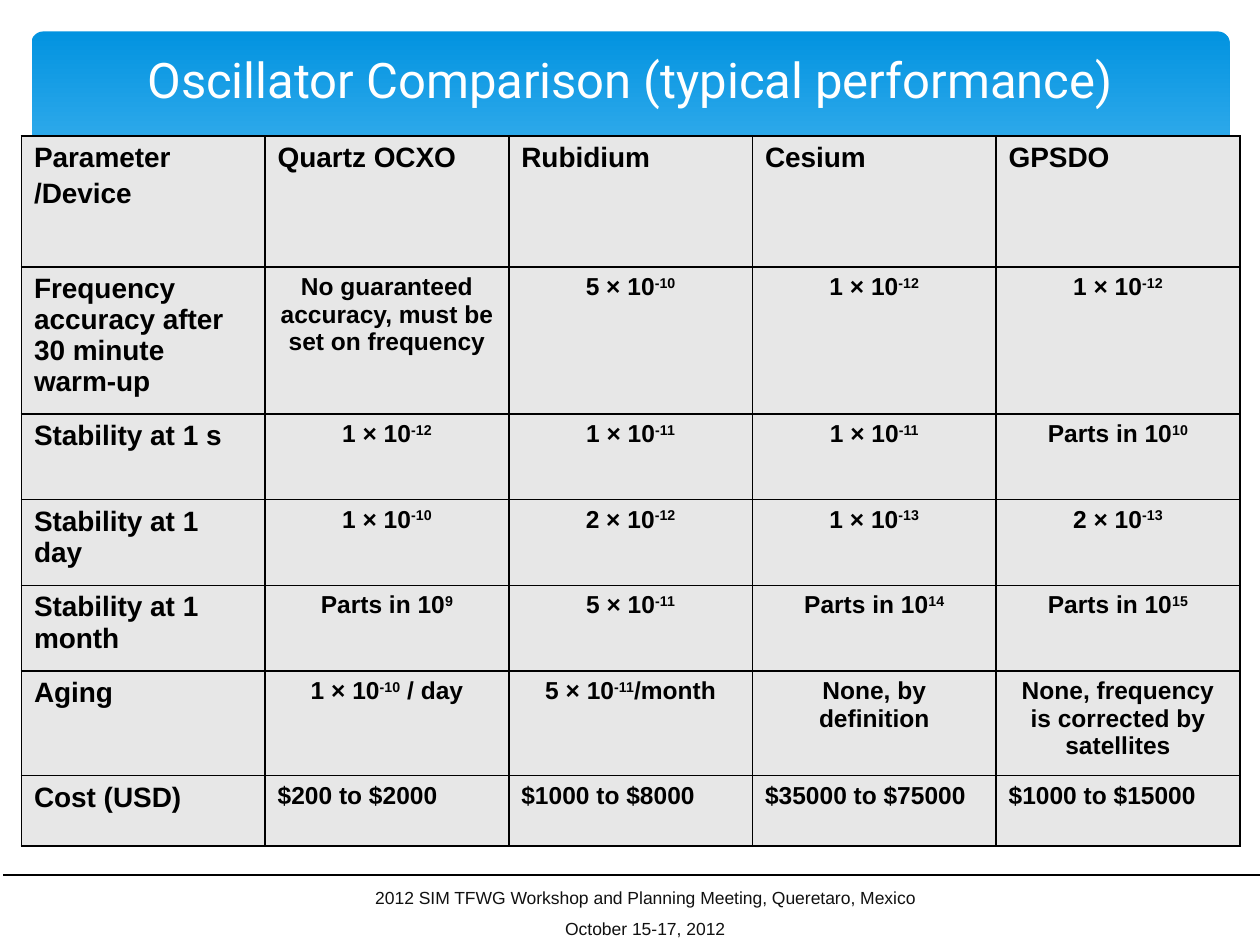
import dataclasses

import pptx
import pptx.dml.color
import pptx.enum.shapes
import pptx.enum.text
import pptx.oxml
import pptx.oxml.ns
import pptx.util

Inches = pptx.util.Inches
Pt = pptx.util.Pt
ALIGN = pptx.enum.text.PP_ALIGN
ANCHOR = pptx.enum.text.MSO_ANCHOR


@dataclasses.dataclass(frozen=True)
class Theme:
    banner_top: str = "0293E0"
    banner_bottom: str = "83D3FE"
    white: str = "FFFFFF"
    black: str = "000000"
    footer_text: str = "111111"
    cell_fill: str = "E7E7E7"
    title_font: str = "Roboto"
    body_font: str = "Arial"
    title_size: int = 28
    label_size: int = 16
    value_size: int = 14
    footer_size: int = 10


THEME = Theme()

# Text between carets is superscript; a line break starts a new paragraph.
ROWS = [
    ["Parameter\n/Device", "Quartz OCXO", "Rubidium", "Cesium", "GPSDO"],
    ["Frequency accuracy after 30 minute warm-up",
     "No guaranteed accuracy, must be set on frequency",
     "5 × 10^-10^", "1 × 10^-12^", "1 × 10^-12^"],
    ["Stability at 1 s", "1 × 10^-12^", "1 × 10^-11^", "1 × 10^-11^", "Parts in 10^10^"],
    ["Stability at 1 day", "1 × 10^-10^", "2 × 10^-12^", "1 × 10^-13^", "2 × 10^-13^"],
    ["Stability at 1 month", "Parts in 10^9^", "5 × 10^-11^", "Parts in 10^14^",
     "Parts in 10^15^"],
    ["Aging", "1 × 10^-10^ / day", "5 × 10^-11^/month", "None, by definition",
     "None, frequency is corrected by satellites"],
    ["Cost (USD)", "$200 to $2000", "$1000 to $8000", "$35000 to $75000",
     "$1000 to $15000"],
]
ROW_HEIGHTS = [1.04, 0.94, 0.68, 0.68, 0.68, 0.83, 0.56]
COLUMN_WIDTH = 1.934


def rgb(color):
    return pptx.dml.color.RGBColor.from_string(color)


def write_text(frame, text, *, size, font, color, bold=False, align=ALIGN.LEFT, gap=0):
    """Fill a text frame, with gap points between its paragraphs."""
    for index, line in enumerate(text.split("\n")):
        paragraph = frame.add_paragraph() if index else frame.paragraphs[0]
        paragraph.alignment = align
        if index:
            paragraph.space_before = Pt(gap)
        for position, part in enumerate(line.split("^")):
            if not part:
                continue
            run = paragraph.add_run()
            run.text = part
            run.font.size = Pt(size)
            run.font.name = font
            run.font.bold = bold
            run.font.color.rgb = rgb(color)
            if position % 2:
                run.font._element.set("baseline", "30000")


def add_text_box(slide, left, top, width, height, text, anchor=ANCHOR.TOP, **text_format):
    shape = slide.shapes.add_textbox(Inches(left), Inches(top), Inches(width), Inches(height))
    shape.text_frame.word_wrap = True
    shape.text_frame.vertical_anchor = anchor
    write_text(shape.text_frame, text, **text_format)


def add_banner(slide):
    shape = slide.shapes.add_shape(
        pptx.enum.shapes.MSO_SHAPE.ROUNDED_RECTANGLE,
        Inches(0.25), Inches(0.25), Inches(9.51), Inches(2.7))
    shape.adjustments[0] = 0.034
    shape.shadow.inherit = False
    shape.line.fill.background()
    shape.fill.gradient()
    shape.fill.gradient_angle = 270
    stops = [(0, THEME.banner_top), (0.9, THEME.banner_bottom)]
    for stop, (position, color) in zip(shape.fill.gradient_stops, stops):
        stop.position = position
        stop.color.rgb = rgb(color)


def add_footer_rule(slide):
    """A white line whose hard black shadow forms the visible rule."""
    line = slide.shapes.add_connector(
        pptx.enum.shapes.MSO_CONNECTOR.STRAIGHT,
        Inches(0), Inches(6.92), Inches(10), Inches(6.92))
    line.line.color.rgb = rgb(THEME.white)
    line.line.width = Pt(1)
    line._element.spPr.append(pptx.oxml.parse_xml(
        f'<a:effectLst {pptx.oxml.ns.nsdecls("a")}>'
        f'<a:outerShdw dist="{Pt(2.8)}" dir="2700000" algn="ctr" rotWithShape="0">'
        f'<a:srgbClr val="{THEME.black}"/></a:outerShdw></a:effectLst>'))


def add_borders(cell):
    properties = cell._tc.get_or_add_tcPr()
    for side in "LRTB":
        properties.append(pptx.oxml.parse_xml(
            f'<a:ln{side} {pptx.oxml.ns.nsdecls("a")} w="{Pt(1)}"><a:solidFill>'
            f'<a:srgbClr val="{THEME.black}"/></a:solidFill></a:ln{side}>'))


def add_comparison_table(slide):
    columns = len(ROWS[0])
    table = slide.shapes.add_table(
        len(ROWS), columns, Inches(0.17), Inches(1.08),
        Inches(COLUMN_WIDTH * columns), Inches(sum(ROW_HEIGHTS))).table
    table.first_row = False
    table.horz_banding = False
    for column in table.columns:
        column.width = Inches(COLUMN_WIDTH)
    for row, height in zip(table.rows, ROW_HEIGHTS):
        row.height = Inches(height)

    last_row = len(ROWS) - 1
    for row_index, texts in enumerate(ROWS):
        for column_index, text in enumerate(texts):
            cell = table.cell(row_index, column_index)
            cell.margin_left = cell.margin_right = Inches(0.1)
            cell.margin_top = cell.margin_bottom = Inches(0.05)
            add_borders(cell)
            cell.fill.solid()
            cell.fill.fore_color.rgb = rgb(THEME.cell_fill)
            is_label = row_index == 0 or column_index == 0
            is_left = is_label or row_index == last_row
            write_text(cell.text_frame, text,
                       size=THEME.label_size if is_label else THEME.value_size,
                       font=THEME.body_font, color=THEME.black, bold=True,
                       align=ALIGN.LEFT if is_left else ALIGN.CENTER, gap=3)


def main():
    presentation = pptx.Presentation()
    presentation.slide_width = Inches(10)
    presentation.slide_height = Inches(7.5)
    slide = presentation.slides.add_slide(presentation.slide_layouts[6])

    # Banner and footer
    add_banner(slide)
    add_text_box(slide, 2.58, 6.99, 5.08, 0.52,
                 "2012 SIM TFWG Workshop and Planning Meeting, Queretaro, Mexico\n"
                 "October 15-17, 2012",
                 size=THEME.footer_size, font=THEME.body_font, color=THEME.footer_text,
                 align=ALIGN.CENTER, gap=5.5)
    add_footer_rule(slide)

    # Title and table
    add_text_box(slide, 0.5, 0, 9, 1.25, "Oscillator Comparison (typical performance)",
                 anchor=ANCHOR.MIDDLE, size=THEME.title_size, font=THEME.title_font,
                 color=THEME.white, align=ALIGN.CENTER)
    add_comparison_table(slide)

    presentation.save("out.pptx")


if __name__ == "__main__":
    main()
